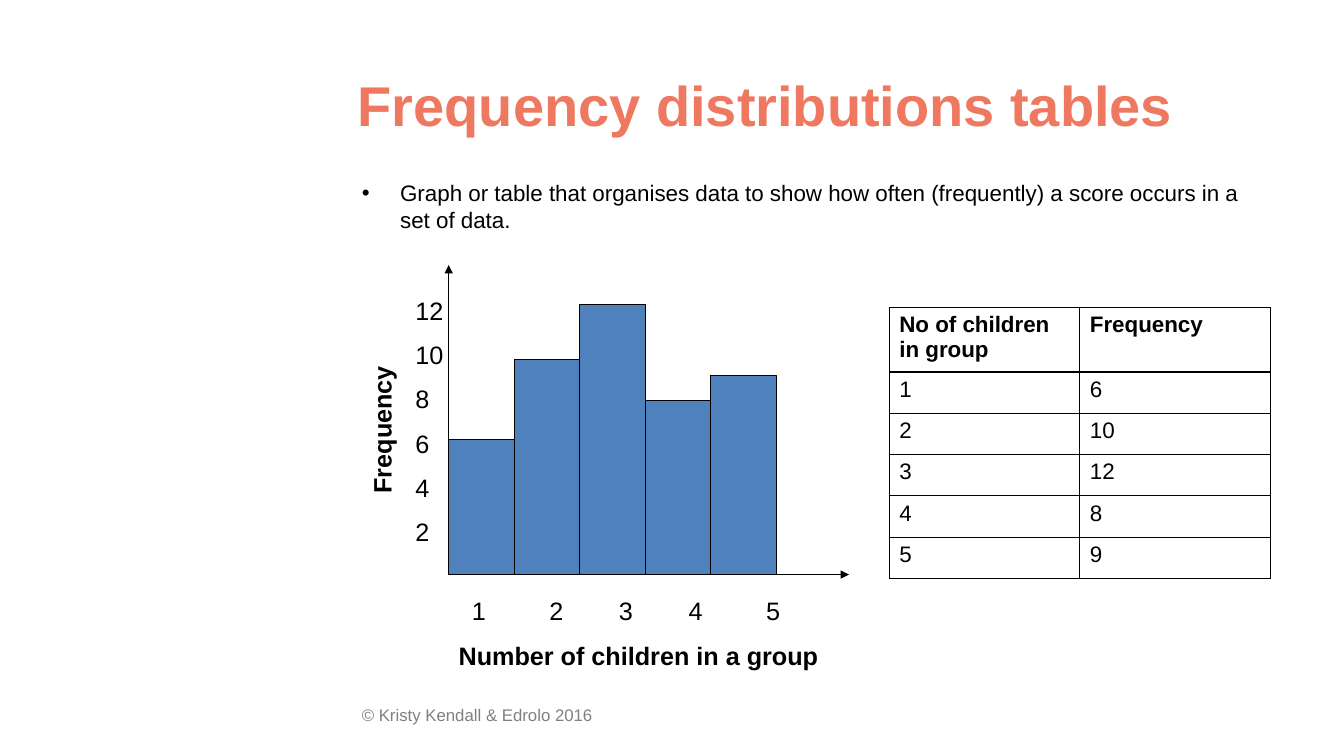
from dataclasses import dataclass

from lxml import etree
from pptx import Presentation
from pptx.dml.color import RGBColor
from pptx.enum.shapes import MSO_CONNECTOR, MSO_SHAPE
from pptx.enum.text import MSO_ANCHOR
from pptx.oxml.ns import qn
from pptx.util import Inches, Pt


@dataclass(frozen=True)
class Theme:
    font: str = "Arial"
    ink: str = "000000"
    coral: str = "EE7860"
    blue: str = "4F81BD"
    grey: str = "808080"
    title: int = 40
    label: int = 18
    body: int = 16
    footer: int = 12
    hairline: float = 0.75
    border: int = 1


THEME = Theme()
TITLE = "Frequency distributions tables"
DEFINITION = ("Graph or table that organises data to show how often "
              "(frequently) a score occurs in a set of data.")
FOOTER = "© Kristy Kendall & Edrolo 2016"
X_TITLE = "Number of children in a group"
Y_TITLE = "Frequency"
Y_LABELS = ["12", "10", "8", "6", "4", "2"]
X_LABELS = [("1", 0.2), ("2", 0.97), ("3", 1.66), ("4", 2.35), ("5", 3.12)]
BAR_HEIGHTS = [1.34, 2.13, 2.68, 1.73, 1.97]
ROWS = [
    ("No of children in group", "Frequency"),
    ("1", "6"),
    ("2", "10"),
    ("3", "12"),
    ("4", "8"),
    ("5", "9"),
]

ORIGIN_X, ORIGIN_Y = 4.45, 5.7
AXIS_TOP, AXIS_RIGHT = 2.63, 8.42
BAR_WIDTH = 0.65
TABLE_LEFT, TABLE_TOP, COLUMN_WIDTH = 8.82, 3.05, 1.89
HEADER_HEIGHT, ROW_HEIGHT = 0.64, 0.41


def colour(value):
    return RGBColor.from_string(value)


def add_child(parent, tag, **attributes):
    return etree.SubElement(parent, qn(tag), attributes)


def write(para, text, size=THEME.label, ink=THEME.ink, bold=False, before=0):
    span = para.add_run()
    span.text = text
    span.font.name = THEME.font
    span.font.size = Pt(size)
    span.font.bold = bold
    span.font.color.rgb = colour(ink)
    para.space_before = Pt(before)


def add_text(page, place, lines, anchor=MSO_ANCHOR.TOP, gap=0, **look):
    box = page.shapes.add_textbox(*map(Inches, place))
    frame = box.text_frame
    frame.word_wrap = True
    frame.vertical_anchor = anchor
    for index, line in enumerate(lines):
        para = frame.add_paragraph() if index else frame.paragraphs[0]
        write(para, line, before=gap if index else 0, **look)
    return box


def add_bullet(para):
    properties = para._p.get_or_add_pPr()
    properties.set("marL", str(Inches(0.38)))
    properties.set("indent", str(-Inches(0.38)))
    add_child(properties, "a:buFont", typeface=THEME.font)
    add_child(properties, "a:buChar", char="•")


def add_centred_tabs(para, positions):
    tabs = add_child(para._p.get_or_add_pPr(), "a:tabLst")
    for position in positions:
        add_child(tabs, "a:tab", pos=str(Inches(position)), algn="ctr")


def add_axis(page, end_x, end_y):
    points = map(Inches, (ORIGIN_X, ORIGIN_Y, end_x, end_y))
    axis = page.shapes.add_connector(MSO_CONNECTOR.STRAIGHT, *points)
    axis.line.color.rgb = colour(THEME.ink)
    axis.line.width = Pt(THEME.hairline)
    add_child(axis.line._get_or_add_ln(), "a:tailEnd", type="triangle")
    add_child(axis._element.spPr, "a:effectLst")


def add_bar(page, index, height):
    place = (ORIGIN_X + index * BAR_WIDTH, ORIGIN_Y - height, BAR_WIDTH, height)
    bar = page.shapes.add_shape(MSO_SHAPE.RECTANGLE, *map(Inches, place))
    bar.shadow.inherit = False
    bar.fill.solid()
    bar.fill.fore_color.rgb = colour(THEME.blue)
    bar.line.color.rgb = colour(THEME.ink)
    bar.line.width = Pt(THEME.hairline)


def add_borders(cell):
    properties = cell._tc.get_or_add_tcPr()
    for side in ("a:lnL", "a:lnR", "a:lnT", "a:lnB"):
        line = add_child(properties, side, w=str(Pt(THEME.border)))
        fill = add_child(line, "a:solidFill")
        add_child(fill, "a:srgbClr", val=THEME.ink)


def add_frequency_table(page):
    column_count = len(ROWS[0])
    height = HEADER_HEIGHT + ROW_HEIGHT * (len(ROWS) - 1)
    place = (TABLE_LEFT, TABLE_TOP, COLUMN_WIDTH * column_count, height)
    table = page.shapes.add_table(
        len(ROWS), column_count, *map(Inches, place)).table
    table.first_row = False
    table.horz_banding = False
    for column in table.columns:
        column.width = Inches(COLUMN_WIDTH)
    for row_index, values in enumerate(ROWS):
        is_header = row_index == 0
        table.rows[row_index].height = Inches(
            HEADER_HEIGHT if is_header else ROW_HEIGHT)
        for column_index, value in enumerate(values):
            cell = table.cell(row_index, column_index)
            write(cell.text_frame.paragraphs[0], value,
                  size=THEME.body, bold=is_header)
            add_borders(cell)
            cell.fill.background()


def add_histogram(page):
    add_axis(page, ORIGIN_X, AXIS_TOP)
    add_axis(page, AXIS_RIGHT, ORIGIN_Y)
    for index, height in enumerate(BAR_HEIGHTS):
        add_bar(page, index, height)
    scale = "".join("\t" + label for label, _ in X_LABELS)
    box = add_text(page, (ORIGIN_X, 5.86, 3.98, 1.16), [scale])
    add_centred_tabs(box.text_frame.paragraphs[0],
                     [position for _, position in X_LABELS])
    write(box.text_frame.add_paragraph(), X_TITLE, bold=True, before=10)
    add_text(page, (4.02, 2.88, 0.58, 3.56), Y_LABELS, gap=10)
    side_title = add_text(page, (2.72, 3.73, 2.13, 0.4), [Y_TITLE], bold=True)
    side_title.rotation = 270


def main():
    deck = Presentation()
    deck.slide_width, deck.slide_height = Inches(13.33), Inches(7.5)
    page = deck.slides.add_slide(deck.slide_layouts[6])
    add_text(page, (3.49, 6.94, 4.5, 0.4), [FOOTER],
             size=THEME.footer, ink=THEME.grey)
    add_text(page, (3.45, 0.28, 9.61, 1.5), [TITLE], anchor=MSO_ANCHOR.MIDDLE,
             size=THEME.title, ink=THEME.coral, bold=True)
    definition = add_text(page, (3.49, 1.73, 9.11, 0.84), [DEFINITION],
                          size=THEME.body)
    add_bullet(definition.text_frame.paragraphs[0])
    add_histogram(page)
    add_frequency_table(page)
    deck.save("out.pptx")


if __name__ == "__main__":
    main()
